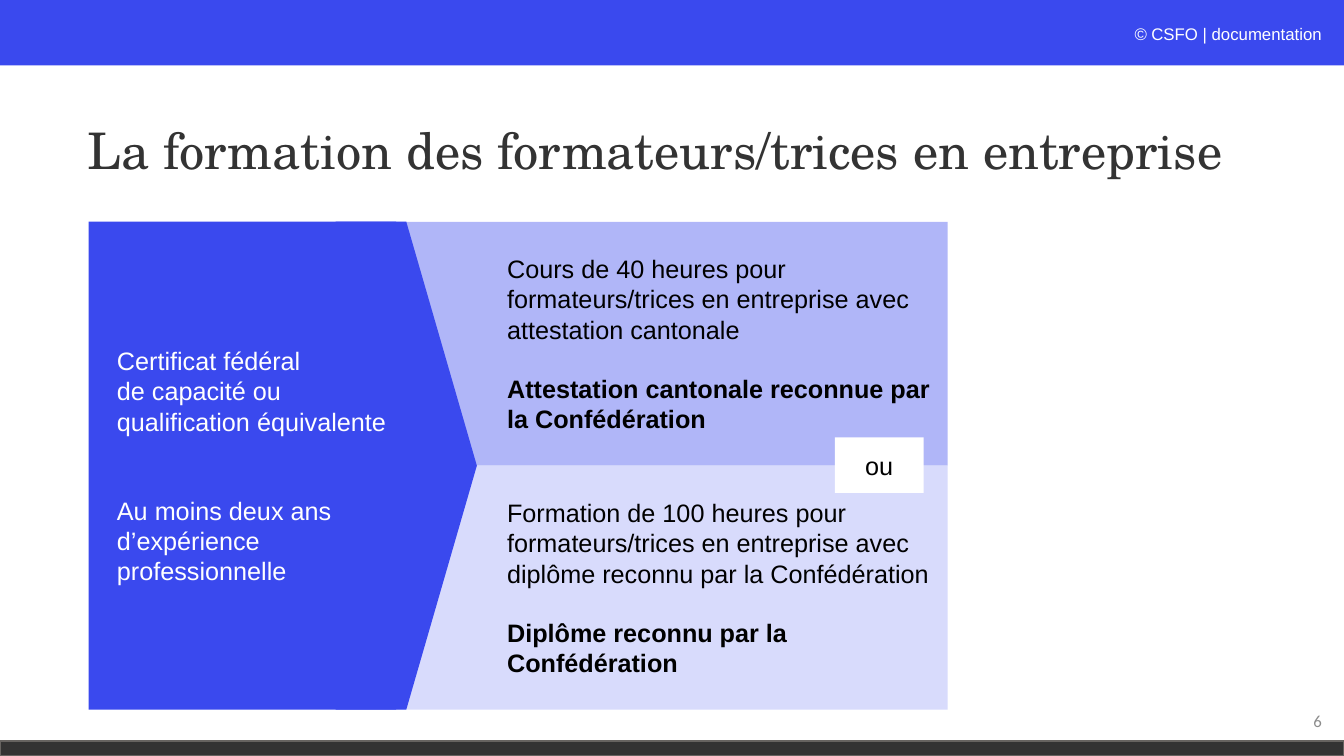
from dataclasses import dataclass

from pptx import Presentation
from pptx import util as u
from pptx.dml.color import RGBColor
from pptx.enum import shapes, text

PX = 9144  # EMU per px, 100 px to the inch
SLIDE_WIDTH, SLIDE_HEIGHT = 1333, 750
PANEL_TOP, HALF_HEIGHT = 220, 242
LEFT_EDGE, OPTION_LEFT, OPTION_WIDTH = 88, 393, 547


@dataclass(frozen=True)
class Theme:
    blue: str = "3A49EE"
    mid_blue: str = "B0B6F8"
    pale_blue: str = "D8DBFC"
    dark: str = "333333"
    edge: str = "666360"
    grey: str = "8C8C8C"
    white: str = "FFFFFF"
    black: str = "000000"
    body_font: str = "Arial"
    title_font: str = "TeX Gyre Schola"
    number_font: str = "Calibri"
    small: int = 12
    body: int = 18
    title: int = 36


THEME = Theme()


@dataclass(frozen=True)
class Span:
    text: str
    bold: bool = False
    italic: bool = False


@dataclass(frozen=True)
class Line:
    spans: tuple[Span, ...]
    space_before: int = 0


@dataclass(frozen=True)
class Style:
    color: str = THEME.black
    font: str = THEME.body_font
    size: int = THEME.body
    align: text.PP_ALIGN = text.PP_ALIGN.LEFT
    inset_left: int = 10
    line_spacing: float = 1.0


@dataclass(frozen=True)
class Block:
    left: int
    top: int
    width: int
    height: int
    fill: str | None = None
    lines: tuple[Line, ...] = ()
    style: Style = Style()
    preset: shapes.MSO_SHAPE = shapes.MSO_SHAPE.RECTANGLE
    outline: str | None = None


def line(words: str, bold: bool = False, space_before: int = 0) -> Line:
    return Line((Span(words, bold),), space_before)


def set_values(target, values: dict) -> None:
    for name, value in values.items():
        setattr(target, name, value)


def place(shape, block: Block) -> None:
    names = ("left", "top", "width", "height")
    set_values(shape, {name: u.Emu(getattr(block, name) * PX) for name in names})


def write_lines(frame, lines: tuple[Line, ...], style: Style) -> None:
    set_values(frame, {
        "word_wrap": True,
        "auto_size": text.MSO_AUTO_SIZE.NONE,
        "vertical_anchor": text.MSO_ANCHOR.MIDDLE,
        "margin_left": u.Emu(style.inset_left * PX),
        "margin_right": u.Emu(10 * PX),
        "margin_top": u.Emu(5 * PX),
        "margin_bottom": u.Emu(5 * PX),
    })
    for index, content in enumerate(lines):
        para = frame.add_paragraph() if index else frame.paragraphs[0]
        set_values(para, {"alignment": style.align, "line_spacing": style.line_spacing})
        if content.space_before:
            para.space_before = u.Pt(content.space_before)
        for span in content.spans:
            run = para.add_run()
            run.text = span.text
            set_values(run.font, {
                "name": style.font,
                "size": u.Pt(style.size),
                "bold": span.bold,
                "italic": span.italic,
            })
            run.font.color.rgb = RGBColor.from_string(style.color)


def add_block(page, block: Block) -> None:
    """Draw a filled shape, or a text box when the block has no fill."""
    if block.fill:
        shape = page.shapes.add_shape(block.preset, 0, 0, 0, 0)
        shape.shadow.inherit = False
        shape.fill.solid()
        shape.fill.fore_color.rgb = RGBColor.from_string(block.fill)
        if block.outline:
            shape.line.color.rgb = RGBColor.from_string(block.outline)
            shape.line.width = u.Pt(1)
        else:
            shape.line.fill.background()
    else:
        shape = page.shapes.add_textbox(0, 0, 0, 0)
    place(shape, block)
    if block.lines:
        write_lines(shape.text_frame, block.lines, block.style)


def option(row: int, fill: str, lines: tuple[Line, ...]) -> Block:
    return Block(OPTION_LEFT, PANEL_TOP + row * HALF_HEIGHT, OPTION_WIDTH, HALF_HEIGHT,
                 fill, lines, Style(inset_left=110))


BLOCKS = (
    Block(0, 0, SLIDE_WIDTH, 65, THEME.blue),
    Block(0, 735, SLIDE_WIDTH, 15, THEME.dark, outline=THEME.edge),
    Block(862, 19, 459, 30,
          lines=(Line((Span("© ", italic=True), Span("CSFO | documentation"))),),
          style=Style(THEME.white, size=THEME.small, align=text.PP_ALIGN.RIGHT)),
    option(0, THEME.mid_blue, (
        line("Cours de 40 heures pour formateurs/trices en entreprise avec"),
        line("attestation cantonale"),
        line("Attestation cantonale reconnue par la Confédération", True, 21),
    )),
    option(1, THEME.pale_blue, (
        line("Formation de 100 heures pour"),
        line("formateurs/trices en entreprise avec"),
        line("diplôme reconnu par la Confédération"),
        line("Diplôme reconnu par la Confédération", True, 21),
    )),
    Block(1021, 695, 300, 40, lines=(line("6"),),
          style=Style(THEME.grey, THEME.number_font, THEME.small, text.PP_ALIGN.RIGHT)),
    Block(333, PANEL_TOP, 140, 2 * HALF_HEIGHT, THEME.blue,
          preset=shapes.MSO_SHAPE.PENTAGON),
    Block(LEFT_EDGE, PANEL_TOP, OPTION_LEFT - LEFT_EDGE, 2 * HALF_HEIGHT, THEME.blue, (
        line("Certificat fédéral"),
        line("de capacité ou"),
        line("qualification équivalente"),
        line("Au moins deux ans", space_before=42),
        line("d’expérience professionnelle"),
    ), Style(THEME.white, inset_left=28)),
    Block(828, 434, 88, 55, THEME.white, (line("ou"),),
          Style(align=text.PP_ALIGN.CENTER)),
)

TITLE = Block(77, 79, 1150, 145,
              lines=(line("La formation des formateurs/trices en entreprise"),),
              style=Style(THEME.dark, THEME.title_font, THEME.title, line_spacing=0.9))


def main() -> None:
    deck = Presentation()
    deck.slide_width, deck.slide_height = u.Emu(SLIDE_WIDTH * PX), u.Emu(SLIDE_HEIGHT * PX)
    page = deck.slides.add_slide(deck.slide_layouts.get_by_name("Title Only"))
    title = page.shapes.title
    place(title, TITLE)
    write_lines(title.text_frame, TITLE.lines, TITLE.style)
    for block in BLOCKS:
        add_block(page, block)
    deck.save("out.pptx")


if __name__ == "__main__":
    main()
